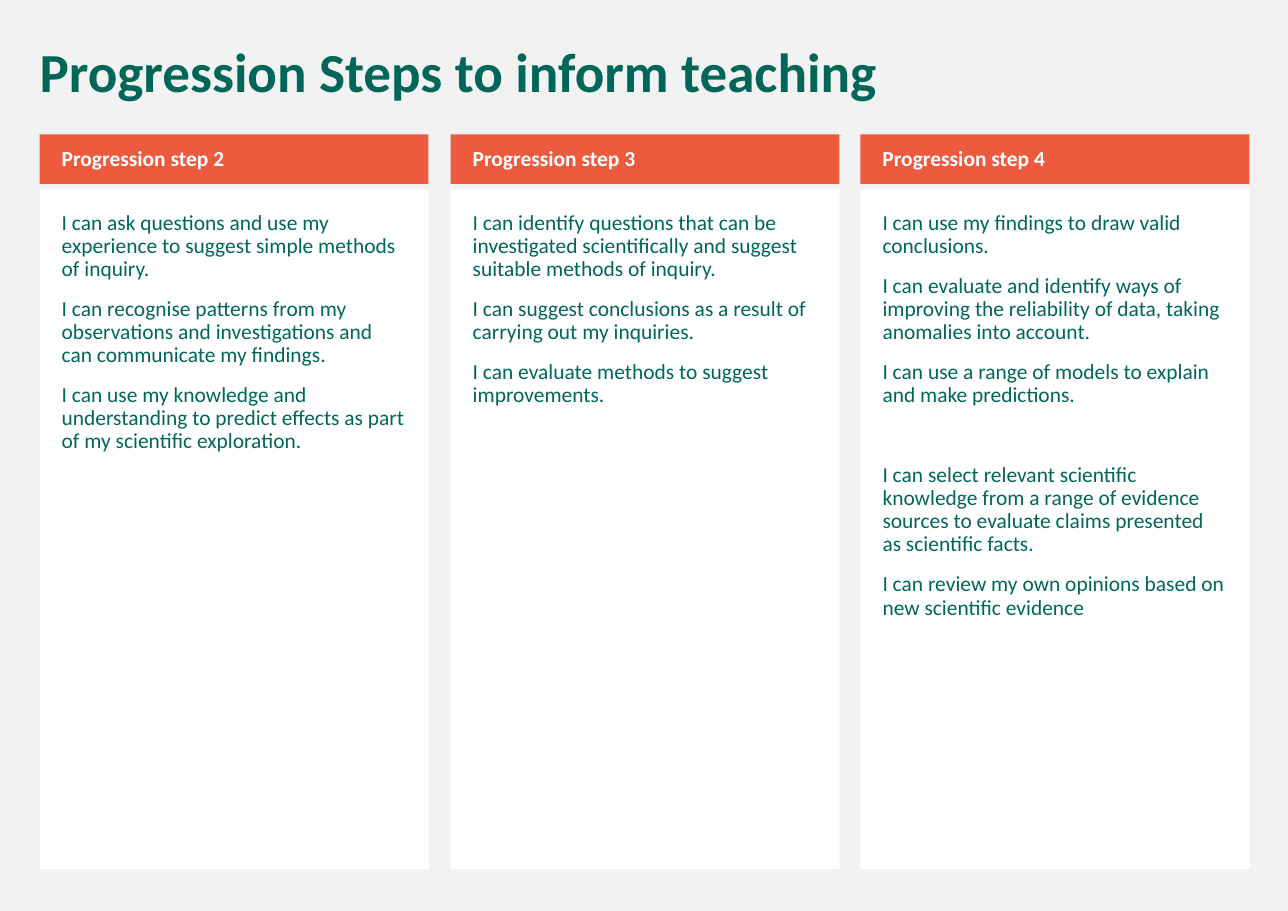
from dataclasses import dataclass

from lxml import etree
from pptx import Presentation
from pptx.dml.color import RGBColor
from pptx.enum.shapes import MSO_SHAPE
from pptx.enum.text import MSO_ANCHOR, MSO_AUTO_SIZE, PP_ALIGN
from pptx.oxml.ns import qn
from pptx.util import Emu, Pt

RECT = MSO_SHAPE.RECTANGLE
TOP, MIDDLE = MSO_ANCHOR.TOP, MSO_ANCHOR.MIDDLE
LEFT = PP_ALIGN.LEFT
NO_FIT = MSO_AUTO_SIZE.NONE

# Lengths are in px, 100 to the inch
SCALE = 9144
WIDE, HIGH = 1169, 827
EDGE, COL_W = 36, 353
HEAD_Y, HEAD_H = 122, 45
LIST_Y, LIST_H = 172, 617

FONT = "Calibri"
GREEN, CORAL, WHITE, GREY = "006758", "ED5A3E", "FFFFFF", "F2F2F2"
GAP, WIDE_GAP = 11, 37


@dataclass
class Step:
    name: str
    items: list[str]
    split: int = 0  # item that follows a wide gap


STEPS = [
    Step("Progression step 2", [
        "I can ask questions and use my experience to suggest simple methods of inquiry.",
        "I can recognise patterns from my observations and investigations and can communicate my findings.",
        "I can use my knowledge and understanding to predict effects as part of my scientific exploration.",
    ]),
    Step("Progression step 3", [
        "I can identify questions that can be investigated scientifically and suggest suitable methods of inquiry.",
        "I can suggest conclusions as a result of carrying out my inquiries.",
        "I can evaluate methods to suggest improvements.",
    ]),
    Step("Progression step 4", [
        "I can use my findings to draw valid conclusions.",
        "I can evaluate and identify ways of improving the reliability of data, taking anomalies into account.",
        "I can use a range of models to explain and make predictions.",
        "I can select relevant scientific knowledge from a range of evidence sources to evaluate claims presented as scientific facts.",
        "I can review my own opinions based on new scientific evidence",
    ], split=3),
]


def px(size: int) -> Emu:
    return Emu(size * SCALE)


def paint(fill, tone: str) -> None:
    fill.solid()
    fill.fore_color.rgb = RGBColor.from_string(tone)


def place(shape, left: int, top: int, width: int, height: int) -> None:
    shape.left, shape.top = px(left), px(top)
    shape.width, shape.height = px(width), px(height)


def write(shape, lines: list[str], size: int, tone: str, bold: bool,
          pads: tuple[int, int, int, int], anchor, split: int = 0) -> None:
    frame = shape.text_frame
    frame.text = "\n".join(lines)
    frame.word_wrap = True
    frame.auto_size = NO_FIT
    frame.vertical_anchor = anchor
    (frame.margin_left, frame.margin_top,
     frame.margin_right, frame.margin_bottom) = map(px, pads)
    for i, para in enumerate(frame.paragraphs):
        para.alignment = LEFT
        para.line_spacing = 0.9
        para.space_before = Pt(WIDE_GAP if split and i == split else GAP)
        para.space_after = Pt(0)
        para.font.name, para.font.size, para.font.bold = FONT, Pt(size), bold
        para.font.color.rgb = RGBColor.from_string(tone)
        # Plain lines, with no bullet or indent
        props = para._p.get_or_add_pPr()
        props.set("marL", "0")
        props.set("indent", "0")
        bullet = etree.Element(qn("a:buNone"))
        props.find(qn("a:spcAft")).addnext(bullet)


def draw_step(slide, slot, step: Step, left: int) -> None:
    # List card
    place(slot, left, LIST_Y, COL_W, LIST_H)
    paint(slot.fill, WHITE)
    write(slot, step.items, 14, GREEN, False, (20, 20, 20, 20), TOP, step.split)

    # Heading band
    band = slide.shapes.add_shape(RECT, px(left), px(HEAD_Y), px(COL_W), px(HEAD_H))
    band.shadow.inherit = False
    band.line.fill.background()
    paint(band.fill, CORAL)
    write(band, [step.name], 14, WHITE, True, (20, 5, 10, 5), MIDDLE)


def main() -> None:
    deck = Presentation()
    deck.slide_width, deck.slide_height = px(WIDE), px(HIGH)
    slide = deck.slides.add_slide(deck.slide_layouts.get_by_name("Comparison"))
    paint(slide.background.fill, GREY)

    # Title
    title, *slots = slide.placeholders
    place(title, 26, 36, 1108, 65)
    write(title, ["Progression Steps to inform teaching"], 36, GREEN, True,
          (10, 5, 10, 5), TOP)

    # Three columns, 372.5 px apart
    for i, step in enumerate(STEPS):
        draw_step(slide, slots[i], step, EDGE + (745 * i + 1) // 2)

    # Spare placeholder
    spare = slots[-1].element
    spare.getparent().remove(spare)

    deck.save("out.pptx")


if __name__ == "__main__":
    main()
